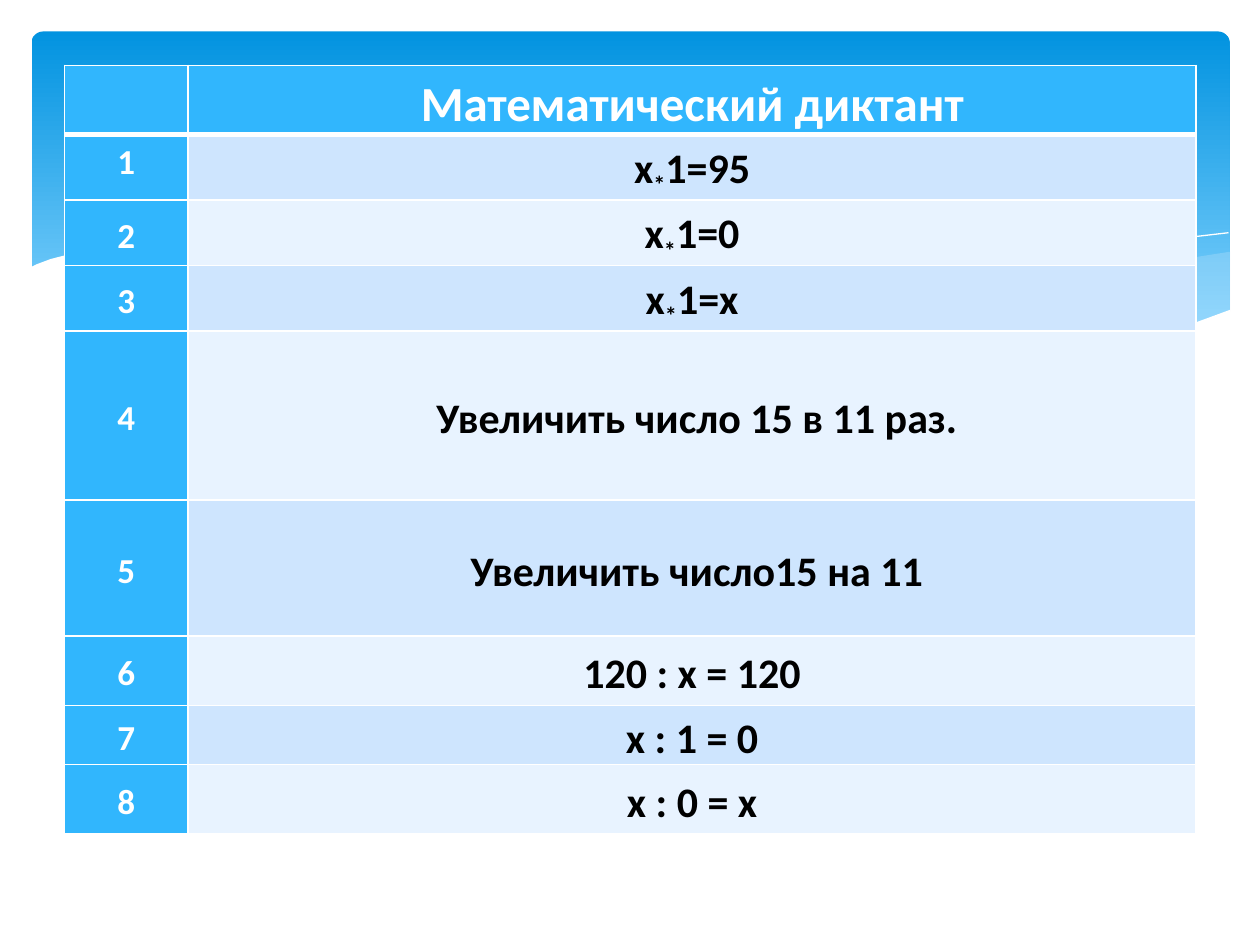
from lxml.etree import SubElement
from pptx import Presentation
from pptx.dml.color import RGBColor
from pptx.enum.shapes import MSO_SHAPE
from pptx.enum.text import MSO_ANCHOR, PP_ALIGN
from pptx.oxml.ns import qn
from pptx.util import Pt

COLORS = {
    "header": "31B6FD", "odd": "CEE5FE", "even": "E8F3FF",
    "white": "FFFFFF", "black": "000000", "wave": "C6E7FC",
    "sky_top": "0293E0", "sky_bottom": "83D3FE",
}
TITLE = "Математический диктант"
TASKS = [
    ["х", "*", "1=95"],
    ["х", "*", "1=0"],
    ["х", "*", "1=х"],
    [" Увеличить число 15 в 11 раз."],
    [" Увеличить число15 на 11"],
    ["120 : х = 120"],
    ["х : 1 = 0"],
    ["х : 0 = х"],
]
COLUMN_WIDTHS = [70.6, 576]
ROW_HEIGHTS = [39.6, 28.8, 28.8, 28.8, 96.5, 77.8, 39.6, 28.8, 39.6]

RIGHT_WAVE = [
    (702, 144), (683, 147), (652, 153), (620, 161), (580, 171), (542, 179),
    (508, 185), (476, 191), (498, 194), (536, 198), (570, 200), (601, 200),
    (628, 197), (652, 194), (673, 189), (693, 181), (703, 178), (703, 144),
]
LONG_WAVE = [
    (643, 197), (603, 191), (558, 183), (508, 173), (453, 160), (420, 152),
    (390, 146), (361, 141), (335, 137), (302, 135), (274, 133), (248, 134),
    (225, 135), (206, 138), (233, 141), (261, 146), (291, 152), (323, 160),
    (354, 167), (382, 173), (420, 181), (456, 188), (490, 193), (520, 197),
    (548, 199), (573, 200), (603, 200), (631, 198),
]
LONG_CURVE = [
    (222, 140), (236, 138), (254, 136), (278, 135), (312, 135), (352, 137),
    (400, 142), (438, 147), (479, 153), (523, 163), (572, 174), (626, 188),
    (653, 196),
]
RIGHT_CURVE = [
    (441, 185), (470, 177), (500, 169), (539, 161), (580, 151), (624, 143),
    (655, 138), (685, 135), (702, 133),
]
WHITE_WAVE = [
    (703, 177), (684, 184), (662, 191), (633, 195), (603, 198), (569, 199),
    (536, 198), (495, 194), (451, 186), (399, 176), (342, 163), (301, 153),
    (263, 145), (228, 139), (195, 135), (166, 133), (139, 132), (116, 132),
    (95, 134), (76, 136), (61, 139), (48, 143), (37, 146), (29, 148),
    (21, 151), (17, 153), (17, 237), (703, 237),
]
WAVES = [
    (RIGHT_WAVE, "wave", 29),
    (LONG_WAVE, "wave", 40),
    (LONG_CURVE, None, None),
    (RIGHT_CURVE, None, None),
    (WHITE_WAVE, "white", 100),
]


def color(name):
    return RGBColor.from_string(COLORS[name])


def add_sky(slide):
    sky = slide.shapes.add_shape(
        MSO_SHAPE.ROUNDED_RECTANGLE, Pt(18), Pt(18), Pt(684.7), Pt(194.4))
    sky.adjustments[0] = 0.034
    sky.shadow.inherit = False
    sky.line.fill.background()
    sky.fill.gradient()
    sky.fill.gradient_angle = 270
    stops = zip(sky.fill.gradient_stops, (0, 0.9), ("sky_top", "sky_bottom"))
    for stop, position, name in stops:
        stop.position = position
        stop.color.rgb = color(name)


def add_wave(slide, points, fill_name, opacity):
    builder = slide.shapes.build_freeform(*points[0], scale=Pt(1))
    builder.add_line_segments(points[1:], close=fill_name is not None)
    shape = builder.convert_to_shape()
    shape.shadow.inherit = False
    if fill_name is None:
        shape.fill.background()
        shape.line.color.rgb = color("white")
        shape.line.width = Pt(0)
        return
    shape.line.fill.background()
    shape.fill.solid()
    shape.fill.fore_color.rgb = color(fill_name)
    if opacity < 100:
        srgb = shape._element.spPr.find(".//" + qn("a:srgbClr"))
        SubElement(srgb, qn("a:alpha")).set("val", str(opacity * 1000))


def style_cell(cell, fill_name, top, bottom):
    properties = cell._tc.get_or_add_tcPr()
    for side, width in (("L", 1), ("R", 1), ("T", top), ("B", bottom)):
        border = SubElement(properties, qn(f"a:ln{side}"), w=str(Pt(width)))
        fill = SubElement(border, qn("a:solidFill"))
        SubElement(fill, qn("a:srgbClr"), val=COLORS["white"])
    cell.fill.solid()
    cell.fill.fore_color.rgb = color(fill_name)
    cell.margin_left = cell.margin_right = Pt(5)
    cell.margin_top = cell.margin_bottom = 0
    cell.vertical_anchor = MSO_ANCHOR.MIDDLE


def write_cell(cell, parts, size, color_name):
    paragraph = cell.text_frame.paragraphs[0]
    paragraph.alignment = PP_ALIGN.CENTER
    paragraph.line_spacing = 1.15
    paragraph.space_after = Pt(10)
    font = paragraph.font
    font.name, font.size, font.bold = "Calibri", Pt(size), True
    font.color.rgb = color(color_name)
    for part in parts:
        run = paragraph.add_run()
        run.text = part
        if part == "*":
            run._r.get_or_add_rPr().set("baseline", "-25000")


def add_task_table(slide):
    table = slide.shapes.add_table(
        len(ROW_HEIGHTS), len(COLUMN_WIDTHS), Pt(36.9), Pt(37.4),
        Pt(sum(COLUMN_WIDTHS)), Pt(sum(ROW_HEIGHTS))).table
    for column, width in zip(table.columns, COLUMN_WIDTHS):
        column.width = Pt(width)
    for row, height in zip(table.rows, ROW_HEIGHTS):
        row.height = Pt(height)

    for column in range(2):
        style_cell(table.cell(0, column), "header", 1, 3)
    write_cell(table.cell(0, 1), [TITLE], 28, "white")
    for number, parts in enumerate(TASKS, 1):
        number_cell, task_cell = table.cell(number, 0), table.cell(number, 1)
        top = 3 if number == 1 else 1
        style_cell(number_cell, "header", top, 1)
        style_cell(task_cell, "odd" if number % 2 else "even", top, 1)
        write_cell(number_cell, [str(number)], 20, "white")
        write_cell(task_cell, parts, 24, "black")
    table.cell(1, 0).vertical_anchor = MSO_ANCHOR.TOP


def main():
    presentation = Presentation()
    presentation.slide_width, presentation.slide_height = Pt(720), Pt(540)
    slide = presentation.slides.add_slide(presentation.slide_layouts[6])
    add_sky(slide)
    for points, fill_name, opacity in WAVES:
        add_wave(slide, points, fill_name, opacity)
    add_task_table(slide)
    presentation.save("out.pptx")


if __name__ == "__main__":
    main()
